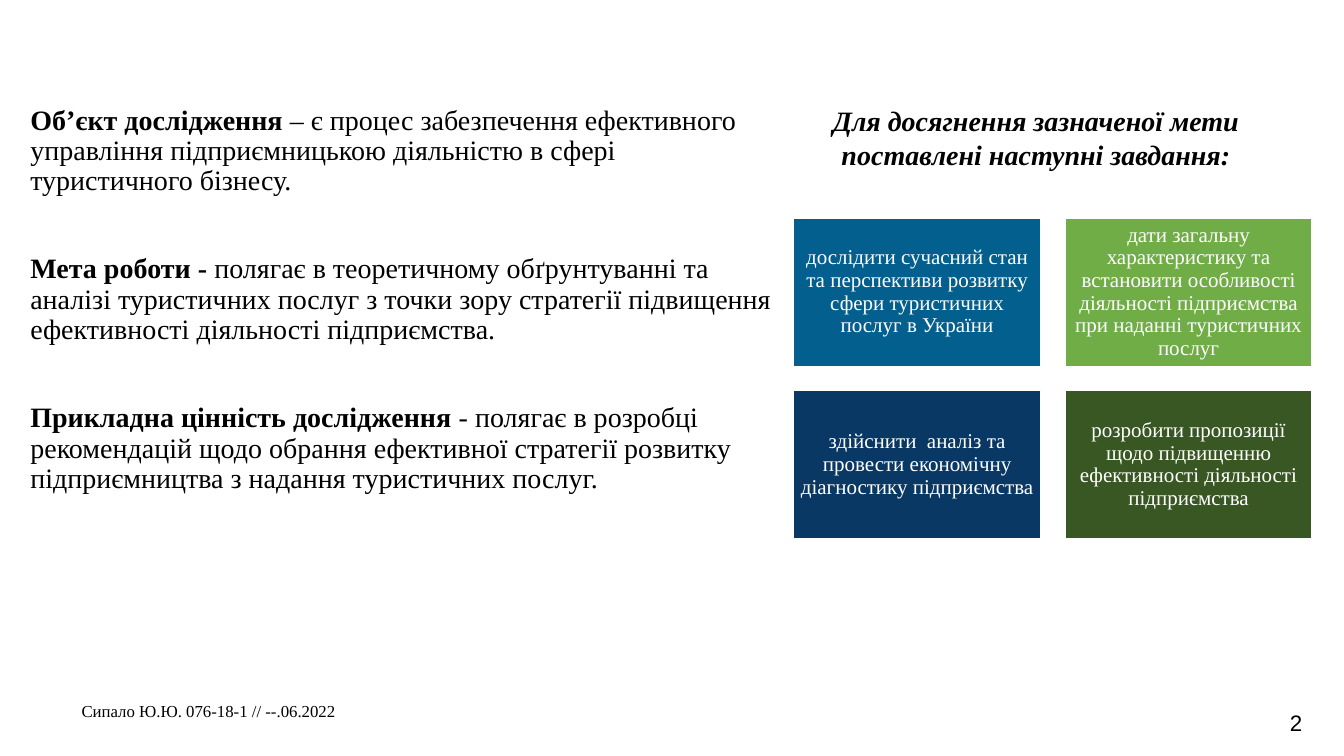
from lxml.etree import SubElement
from pptx import Presentation
from pptx.dml.color import RGBColor
from pptx.enum.shapes import MSO_SHAPE as Shape
from pptx.enum.text import MSO_ANCHOR as Anchor, MSO_AUTO_SIZE as AutoSize, PP_ALIGN as Align
from pptx.oxml.ns import qn
from pptx.util import Cm, Pt

BLACK = RGBColor(0x00, 0x00, 0x00)
WHITE = RGBColor(0xFF, 0xFF, 0xFF)
TEAL = RGBColor(0x03, 0x5F, 0x8E)
GREEN = RGBColor(0x70, 0xAD, 0x47)
NAVY = RGBColor(0x09, 0x38, 0x64)
FOREST = RGBColor(0x38, 0x57, 0x23)
SERIF = "Times New Roman"

STATEMENTS = [
    ("Об’єкт дослідження", " – є процес забезпечення ефективного управління "
     "підприємницькою діяльністю в сфері туристичного бізнесу."),
    ("Мета роботи - ", "полягає в теоретичному обґрунтуванні та аналізі туристичних послуг "
     "з точки зору стратегії підвищення ефективності діяльності підприємства."),
    ("Прикладна цінність дослідження ", "- полягає в розробці рекомендацій щодо обрання "
     "ефективної стратегії розвитку підприємництва з надання туристичних послуг."),
]
TASKS = [
    ("дослідити сучасний стан та перспективи розвитку сфери туристичних послуг в України", TEAL),
    ("дати загальну характеристику та встановити особливості діяльності підприємства "
     "при наданні туристичних послуг", GREEN),
    ("здійснити  аналіз та провести економічну діагностику підприємства", NAVY),
    ("розробити пропозиції щодо підвищенню ефективності діяльності підприємства", FOREST),
]


def apply(target, values):
    """Set every attribute in the dict on the target."""
    for name, value in values.items():
        setattr(target, name, value)


def place(box, left, top, width, height):
    """Move and size a box, in centimetres."""
    apply(box, {"left": Cm(left), "top": Cm(top), "width": Cm(width), "height": Cm(height)})


def format_frame(frame, **values):
    """Make a frame wrap without resizing its text."""
    apply(frame, {"word_wrap": True, "auto_size": AutoSize.NONE,
                  "vertical_anchor": Anchor.TOP, **values})


def add_span(para, text, size, color=BLACK, name=SERIF, **values):
    """Add a formatted run of text to a paragraph."""
    span = para.add_run()
    span.text = text
    apply(span.font, {"size": Pt(size), "name": name, **values})
    span.font.color.rgb = color


def format_plain(para):
    """Give a body paragraph tight lines and no bullet."""
    properties = para._p.get_or_add_pPr()
    properties.set("marL", "0")
    properties.set("indent", "0")
    SubElement(properties, qn("a:buNone"))
    apply(para, {"line_spacing": 0.9, "space_before": Pt(0), "alignment": Align.LEFT})


def fill_statements(box):
    """Write the research statements with bold lead-ins."""
    place(box, 0.51, 1.02, 19.28, 15.24)
    frame = box.text_frame
    format_frame(frame, margin_top=Cm(1.65))
    for index, (lead, rest) in enumerate(STATEMENTS):
        para = frame.add_paragraph() if index else frame.paragraphs[0]
        format_plain(para)
        if index:
            para.space_before = Pt(41.5)
        add_span(para, lead, 20, bold=True)
        add_span(para, rest, 20, bold=False)


def fill_author(box):
    """Write the author line at the foot of the slide."""
    place(box, 1.8, 17.58, 27.66, 0.66)
    format_frame(box.text_frame)
    para = box.text_frame.paragraphs[0]
    format_plain(para)
    add_span(para, "Сипало Ю.Ю. 076-18-1 // --.06.2022", 12)


def fill_heading(box):
    """Write the heading above the tasks."""
    place(box, 19.58, 2.49, 13.06, 1.96)
    format_frame(box.text_frame)
    para = box.text_frame.paragraphs[0]
    para.alignment = Align.CENTER
    add_span(para, "Для досягнення зазначеної мети поставлені наступні завдання:", 20,
             bold=True, italic=True)


def add_task(slide, index, text, color):
    """Add one coloured task box to the two-column grid."""
    row, column = divmod(index, 2)
    box = slide.shapes.add_shape(Shape.RECTANGLE, Cm(20 + 6.84 * column),
                                 Cm(5.49 + 4.35 * row), Cm(6.23), Cm(3.74))
    box.shadow.inherit = False
    box.fill.solid()
    box.fill.fore_color.rgb = color
    box.line.color.rgb = WHITE
    box.line.width = Pt(1)
    inset = Cm(0.15)
    format_frame(box.text_frame, vertical_anchor=Anchor.MIDDLE, margin_left=inset,
                 margin_right=inset, margin_top=inset, margin_bottom=inset)
    para = box.text_frame.paragraphs[0]
    apply(para, {"alignment": Align.CENTER, "line_spacing": 0.9})
    add_span(para, text, 15, WHITE)


def add_page_number(slide):
    """Add the page number in the lower right corner."""
    box = slide.shapes.add_textbox(Cm(31.85), Cm(17.75), Cm(1.63), Cm(0.94))
    format_frame(box.text_frame)
    para = box.text_frame.paragraphs[0]
    para.alignment = Align.CENTER
    add_span(para, "2", 16, name="Arial")


def main():
    """Build the slide and save the deck."""
    deck = Presentation()
    apply(deck, {"slide_width": Cm(33.87), "slide_height": Cm(19.05)})
    slide = deck.slides.add_slide(deck.slide_layouts[3])
    heading, statements, author = slide.placeholders
    add_page_number(slide)
    fill_statements(statements)
    fill_author(author)
    for index, (text, color) in enumerate(TASKS):
        add_task(slide, index, text, color)
    fill_heading(heading)
    deck.save("out.pptx")


if __name__ == "__main__":
    main()
